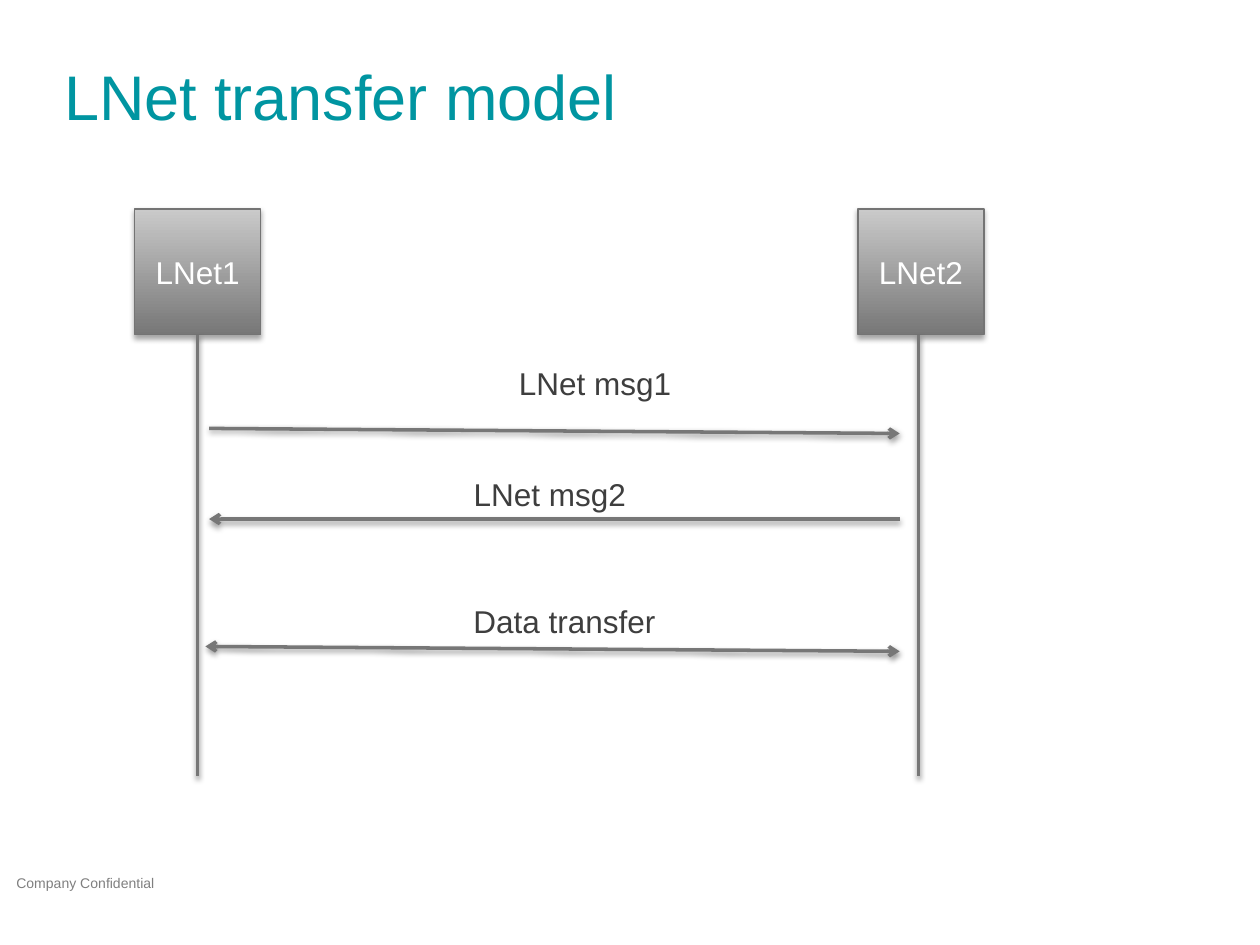
"""Build the LNet transfer model sequence slide."""
from lxml.etree import SubElement
from pptx import Presentation
from pptx.dml.color import RGBColor as Color
from pptx.enum.shapes import MSO_CONNECTOR as Link, MSO_SHAPE as Form
from pptx.enum.text import MSO_ANCHOR as Anchor, PP_ALIGN as Align
from pptx.oxml.ns import qn
from pptx.util import Pt

TEAL = Color(0x00, 0x95, 0xA1)
DARK = Color(0x3E, 0x3E, 0x3E)
GRAY = Color(0x77, 0x77, 0x77)
LIGHT = Color(0xCA, 0xCA, 0xCA)
EDGE = Color(0x74, 0x74, 0x74)
NOTE = Color(0x7F, 0x7F, 0x7F)
WHITE = Color(0xFF, 0xFF, 0xFF)
BLACK = Color(0x00, 0x00, 0x00)


def shade(item, dist, alpha):
    effect = SubElement(item.element.spPr, qn("a:effectLst"))
    outer = SubElement(effect, qn("a:outerShdw"), blurRad=str(Pt(3.1)),
                       dist=str(Pt(dist)), dir="5400000", rotWithShape="0")
    color = SubElement(outer, qn("a:srgbClr"), val=str(BLACK))
    SubElement(color, qn("a:alpha"), val=str(alpha * 1000))


def write(frame, text, size, color):
    run = frame.paragraphs[0].add_run()
    run.text = text
    run.font.name = "Arial"
    run.font.size = Pt(size)
    run.font.color.rgb = color


def label(slide, text, area, size=18, color=DARK, wrap=False, inset=3.6):
    box = slide.shapes.add_textbox(*map(Pt, area))
    frame = box.text_frame
    frame.word_wrap = wrap
    frame.margin_top = frame.margin_bottom = Pt(inset)
    write(frame, text, size, color)
    return frame


def node(slide, text, left):
    box = slide.shapes.add_shape(Form.RECTANGLE, Pt(left), Pt(119.4), Pt(72), Pt(72))
    box.fill.gradient()
    box.fill.gradient_angle = 90
    for stop, color in zip(box.fill.gradient_stops, (GRAY, LIGHT)):
        stop.color.rgb = color
    box.line.color.rgb = EDGE
    box.line.width = Pt(0.75)
    shade(box, 1.8, 35)
    frame = box.text_frame
    frame.vertical_anchor = Anchor.MIDDLE
    frame.paragraphs[0].alignment = Align.CENTER
    write(frame, text, 18, WHITE)


def line(slide, start, end, tips=()):
    link = slide.shapes.add_connector(Link.STRAIGHT, *map(Pt, start + end))
    link.line.color.rgb = GRAY
    link.line.width = Pt(2)
    for tip in tips:
        SubElement(link.line._get_or_add_ln(), qn(f"a:{tip}End"), type="arrow")
    shade(link, 1.6, 38)


def main():
    deck = Presentation()
    deck.slide_width, deck.slide_height = Pt(720), Pt(540)
    slide = deck.slides.add_slide(deck.slide_layouts[6])

    label(slide, "Company Confidential", (2.2, 496, 104, 17.3), 8, NOTE)
    title = label(slide, "LNet transfer model", (29.5, 22.3, 474.5, 64), 36, TEAL, True, 7.2)
    title.vertical_anchor = Anchor.MIDDLE

    for name, left, mid in (("LNet1", 77, 113), ("LNet2", 490.3, 524.9)):
        node(slide, name, left)
        line(slide, (mid, 191.5), (mid, 443.5))

    left, right = 119.5, 514.1
    line(slide, (left, 244.8), (right, 247.7), ("tail",))
    line(slide, (left, 296.6), (right, 296.6), ("head",))
    line(slide, (117.4, 369.4), (right, 372.2), ("head", "tail"))

    label(slide, "LNet msg1", (289.4, 204.5, 102.2, 29))
    label(slide, "LNet msg2", (263.5, 267.8, 102.2, 29))
    label(slide, "Data transfer", (263.5, 340.6, 119.5, 29))
    deck.save("out.pptx")


if __name__ == "__main__":
    main()
